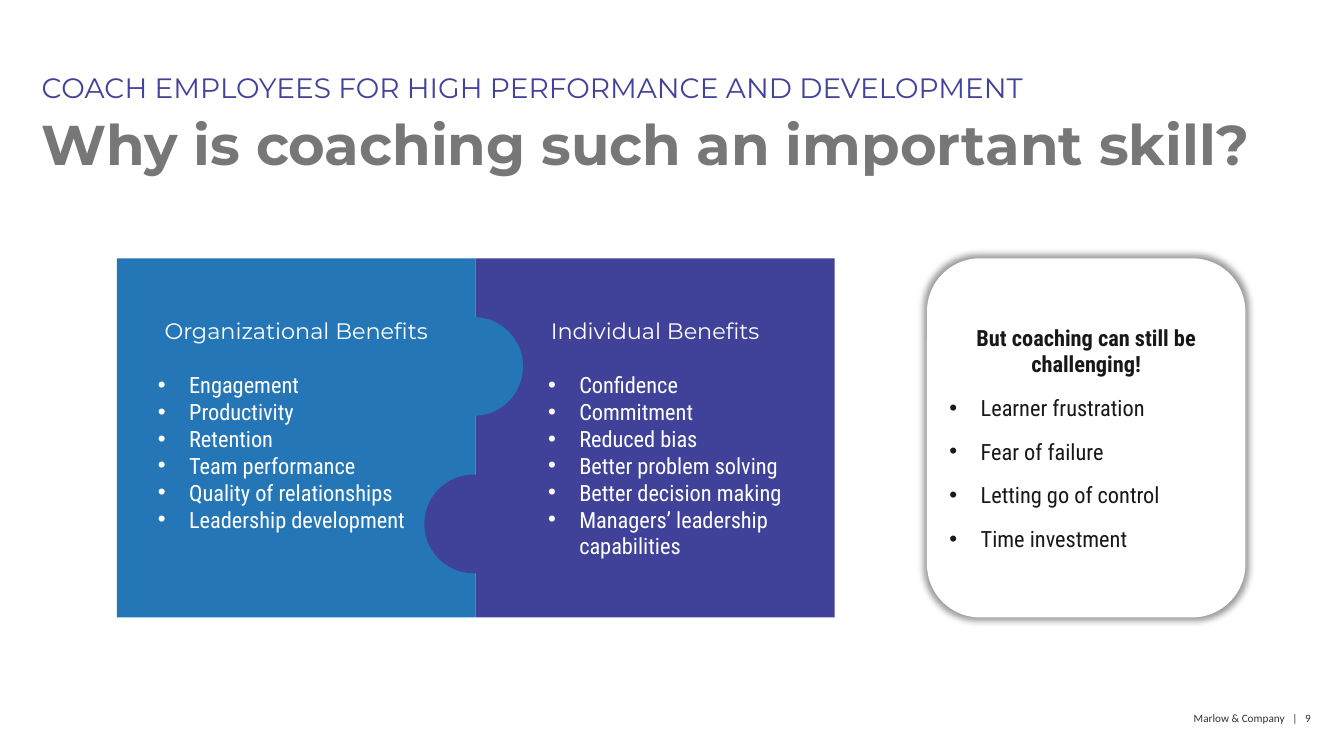
from lxml import etree
from pptx import Presentation
from pptx.dml.color import RGBColor
from pptx.enum.shapes import MSO_SHAPE
from pptx.enum.text import MSO_ANCHOR, MSO_AUTO_SIZE, PP_ALIGN
from pptx.oxml.ns import qn
from pptx.util import Pt

RECT, ROUNDED, OVAL = MSO_SHAPE.RECTANGLE, MSO_SHAPE.ROUNDED_RECTANGLE, MSO_SHAPE.OVAL
LEFT, CENTER, RIGHT = PP_ALIGN.LEFT, PP_ALIGN.CENTER, PP_ALIGN.RIGHT
TOP, MIDDLE = MSO_ANCHOR.TOP, MSO_ANCHOR.MIDDLE
NO_FIT = MSO_AUTO_SIZE.NONE

BLUE = RGBColor(0x25, 0x76, 0xB7)
PURPLE = RGBColor(0x40, 0x42, 0x99)
EYEBROW_PURPLE = RGBColor(0x41, 0x42, 0x99)
GREY = RGBColor(0x77, 0x77, 0x77)
FOOTER_GREY = RGBColor(0x33, 0x33, 0x33)
INK = RGBColor(0x18, 0x18, 0x18)
WHITE = RGBColor(0xFF, 0xFF, 0xFF)
HEAD_FONT, LIST_FONT, FOOTER_FONT = "Montserrat", "Roboto Condensed", "Calibri"

EYEBROW = "COACH EMPLOYEES FOR HIGH PERFORMANCE AND DEVELOPMENT"
TITLE = "Why is coaching such an important skill?"
FOOTER = "Marlow & Company   |   9"
# heading, benefits, colour, indent steps, circle top
PUZZLE = [
    ("Organizational Benefits",
     ["Engagement", "Productivity", "Retention", "Team performance",
      "Quality of relationships", "Leadership development"], BLUE, 2, 226.5),
    ("Individual Benefits",
     ["Confidence", "Commitment", "Reduced bias", "Better problem solving",
      "Better decision making", "Managers’ leadership capabilities"], PURPLE, 3, 339),
]
CHALLENGE = "But coaching can still be challenging!"
CHALLENGES = ["Learner frustration", "Fear of failure", "Letting go of control",
              "Time investment"]

PANEL_LEFT, PANEL_TOP, PANEL_SIZE = 83.5, 184.5, 256.5
CARD_LEFT, CARD_WIDTH = 662.5, 227.5
CIRCLE = 70.5
INDENT = 22.3

prs = Presentation()
prs.slide_width, prs.slide_height = Pt(960.5), Pt(540)
slide = prs.slides.add_slide(prs.slide_layouts[1])


def set_all(target, values):
    for name, value in values.items():
        setattr(target, name, value)


def place(part, left, top, width, height):
    set_all(part, {"left": Pt(left), "top": Pt(top),
                   "width": Pt(width), "height": Pt(height)})


def frame(part, anchor, inset=(7.2, 3.6, 7.2, 3.6)):
    sides = ("margin_left", "margin_top", "margin_right", "margin_bottom")
    set_all(part.text_frame, {"word_wrap": True, "auto_size": NO_FIT,
                              "vertical_anchor": anchor,
                              **{side: Pt(gap) for side, gap in zip(sides, inset)}})


def write(part, text, font, size, color, align=LEFT, bold=False, spacing=1.0,
          after=0, steps=0):
    """Add a paragraph; one indent step or more gives it a bullet."""
    text_frame = part.text_frame
    paragraph = text_frame.add_paragraph() if text_frame.text else text_frame.paragraphs[0]
    set_all(paragraph, {"alignment": align, "line_spacing": spacing,
                        "space_before": Pt(0), "space_after": Pt(after)})
    run = paragraph.add_run()
    run.text = text
    set_all(run.font, {"name": font, "size": Pt(size), "bold": bold})
    run.font.color.rgb = color
    properties = paragraph._p.get_or_add_pPr()
    properties.set("marL", str(Pt(INDENT * steps)))
    properties.set("indent", str(Pt(-INDENT if steps else 0)))
    if steps:
        etree.SubElement(properties, qn("a:buFont"), typeface="Arial")
        etree.SubElement(properties, qn("a:buChar"), char="•")
    else:
        etree.SubElement(properties, qn("a:buNone"))


def add_block(kind, left, top, width, height, fill):
    block = slide.shapes.add_shape(kind, Pt(left), Pt(top), Pt(width), Pt(height))
    block.shadow.inherit = False
    block.fill.solid()
    block.fill.fore_color.rgb = fill
    block.line.fill.background()
    return block


def add_glow(block):
    effects = block._element.spPr.find(qn("a:effectLst"))
    shadow = etree.SubElement(effects, qn("a:outerShdw"), blurRad=str(Pt(5)),
                              sx="102000", sy="102000", algn="ctr", rotWithShape="0")
    black = etree.SubElement(shadow, qn("a:srgbClr"), val="000000")
    etree.SubElement(black, qn("a:alpha"), val="40000")


title, eyebrow = slide.shapes.title, slide.placeholders[1]
place(eyebrow, 22.5, 49.5, 863, 29)
frame(eyebrow, MIDDLE)
write(eyebrow, EYEBROW, HEAD_FONT, 20, EYEBROW_PURPLE, spacing=0.9)
place(title, 22.5, 82, 924.5, 47)
frame(title, MIDDLE)
write(title, TITLE, HEAD_FONT, 40, GREY, bold=True, spacing=0.9)

for column, (heading, benefits, color, steps, _) in enumerate(PUZZLE):
    panel = add_block(RECT, PANEL_LEFT + column * PANEL_SIZE, PANEL_TOP,
                      PANEL_SIZE, PANEL_SIZE, color)
    frame(panel, TOP, (7.2, 42, 7.2, 3.6))
    write(panel, heading, HEAD_FONT, 16, WHITE, CENTER, after=19.5)
    for benefit in benefits:
        write(panel, benefit, LIST_FONT, 16, WHITE, steps=steps)

card = add_block(ROUNDED, CARD_LEFT, PANEL_TOP, CARD_WIDTH, PANEL_SIZE, WHITE)
add_glow(card)
frame(card, MIDDLE, (5, 5, 5, 5))
write(card, CHALLENGE, LIST_FONT, 16, INK, CENTER, bold=True, after=12)
for challenge in CHALLENGES:
    write(card, challenge, LIST_FONT, 16, INK, after=12, steps=1)

seam = PANEL_LEFT + PANEL_SIZE
for _, _, color, _, circle_top in PUZZLE:
    add_block(OVAL, seam - CIRCLE / 2 - 1.5, circle_top, CIRCLE, CIRCLE, color)

footer = slide.shapes.add_textbox(Pt(773.5), Pt(507), Pt(163.5), Pt(14.5))
frame(footer, TOP, (0, 0, 0, 0))
write(footer, FOOTER, FOOTER_FONT, 8, FOOTER_GREY, RIGHT, spacing=1.1)

prs.save("out.pptx")
